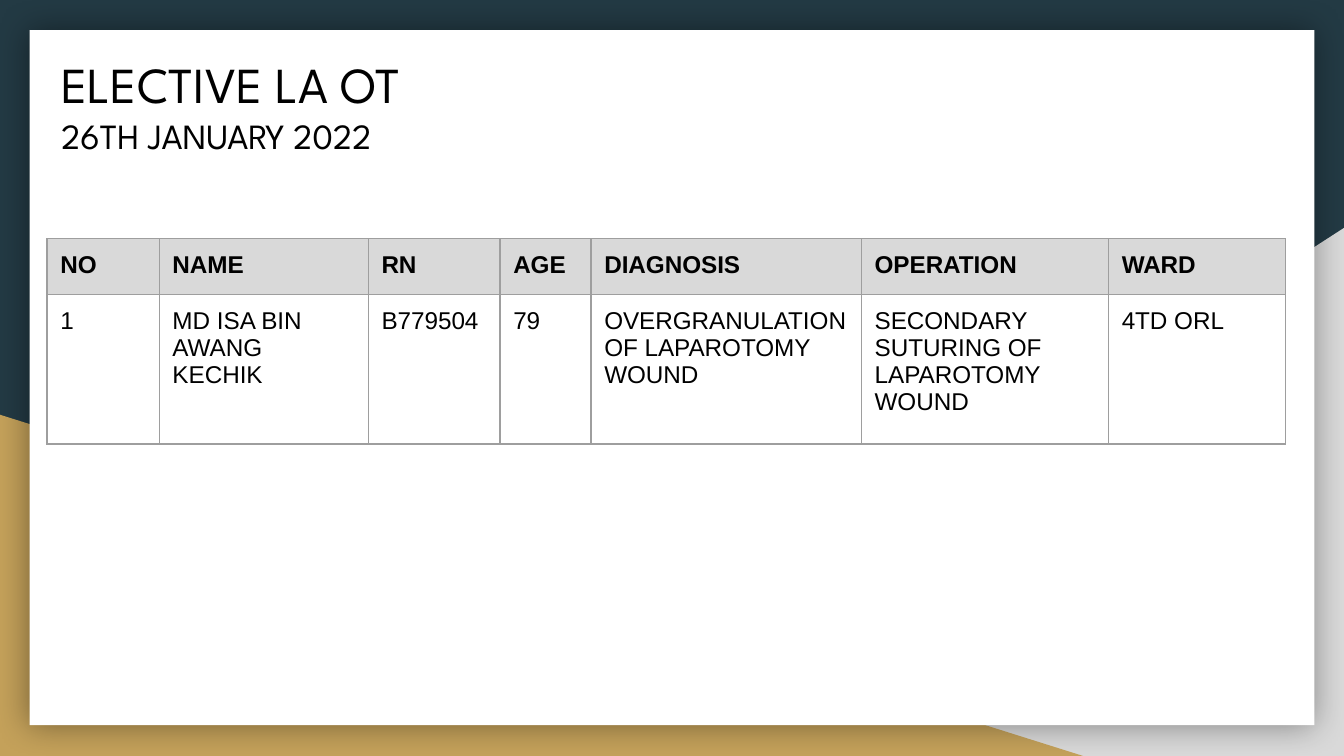
from pptx import Presentation
from pptx.dml.color import RGBColor
from pptx.enum.shapes import MSO_SHAPE
from pptx.enum.text import MSO_ANCHOR
from pptx.oxml.ns import qn
from pptx.util import Cm, Pt
from lxml import etree

RECTANGLE = MSO_SHAPE.RECTANGLE
RIGHT_TRIANGLE = MSO_SHAPE.RIGHT_TRIANGLE
TOP = MSO_ANCHOR.TOP

COLOURS = {
    "navy": "233A44",
    "gold": "C4A15A",
    "grey": "D9D9D9",
    "white": "FFFFFF",
    "black": "000000",
    "border": "9E9E9E",
}
PAGE_WIDTH, PAGE_HEIGHT = 25.4, 14.29
COLUMN_WIDTHS = [2.12, 3.95, 2.49, 1.72, 5.11, 4.67, 3.35]
ROW_HEIGHTS = [1.02, 2.83]
PATIENTS = [
    ["NO", "NAME", "RN", "AGE", "DIAGNOSIS", "OPERATION", "WARD"],
    ["1", "MD ISA BIN AWANG KECHIK", "B779504", "79",
     "OVERGRANULATION OF LAPAROTOMY WOUND",
     "SECONDARY SUTURING OF LAPAROTOMY WOUND", "4TD ORL"],
]


class SlideBuilder:
    title_font = "League Spartan"
    body_font = "Arial"
    body_size = 13
    inset = Cm(0.25)

    def __init__(self, page):
        self.page = page

    def colour(self, name):
        return RGBColor.from_string(COLOURS[name])

    def paint(self, fill, name):
        fill.solid()
        fill.fore_color.rgb = self.colour(name)

    def background(self, name):
        self.paint(self.page.background.fill, name)

    def shape(self, kind, left, top, width, height, fill, flipped=False):
        shape = self.page.shapes.add_shape(kind, Cm(left), Cm(top), Cm(width), Cm(height))
        shape.shadow.inherit = False
        shape.line.fill.background()
        self.paint(shape.fill, fill)
        if flipped:
            shape.element.spPr.find(qn("a:xfrm")).set("flipH", "1")
        return shape

    def glow_shadow(self, shape, name, blur, opacity):
        effects = shape.element.spPr.find(qn("a:effectLst"))
        shadow = etree.SubElement(effects, qn("a:outerShdw"), blurRad=str(Pt(blur)),
                                  dist="0", dir="0", algn="ctr", rotWithShape="0")
        shade = etree.SubElement(shadow, qn("a:srgbClr"), val=COLOURS[name])
        etree.SubElement(shade, qn("a:alpha"), val=str(opacity * 1000))

    def set_insets(self, holder):
        holder.margin_left = holder.margin_right = self.inset
        holder.margin_top = holder.margin_bottom = self.inset
        holder.vertical_anchor = TOP

    def add_span(self, para, text, font, size, bold=False):
        span = para.add_run()
        span.text = text
        span.font.name = font
        span.font.size = Pt(size)
        span.font.bold = bold
        span.font.color.rgb = self.colour("black")

    def title(self, left, top, width, height, lines):
        box = self.page.shapes.add_textbox(Cm(left), Cm(top), Cm(width), Cm(height))
        frame = box.text_frame
        frame.word_wrap = True
        self.set_insets(frame)
        for index, (text, size) in enumerate(lines):
            para = frame.add_paragraph() if index else frame.paragraphs[0]
            self.add_span(para, text, self.title_font, size)

    def border(self, cell):
        properties = cell._tc.get_or_add_tcPr()
        for side in ("a:lnL", "a:lnR", "a:lnT", "a:lnB"):
            line = etree.SubElement(properties, qn(side), w=str(Pt(0.75)))
            fill = etree.SubElement(line, qn("a:solidFill"))
            etree.SubElement(fill, qn("a:srgbClr"), val=COLOURS["border"])

    def table(self, left, top, widths, heights, rows):
        frame = self.page.shapes.add_table(len(rows), len(widths), Cm(left), Cm(top),
                                           Cm(sum(widths)), Cm(sum(heights)))
        table = frame.table
        table.horz_banding = False
        for column, width in zip(table.columns, widths):
            column.width = Cm(width)
        for row, height, texts in zip(table.rows, heights, rows):
            row.height = Cm(height)
            heading = texts is rows[0]
            for cell, text in zip(row.cells, texts):
                self.set_insets(cell)
                self.border(cell)
                if heading:
                    self.paint(cell.fill, "grey")
                else:
                    cell.fill.background()
                self.add_span(cell.text_frame.paragraphs[0], text,
                              self.body_font, self.body_size, heading)


def main():
    deck = Presentation()
    deck.slide_width, deck.slide_height = Cm(PAGE_WIDTH), Cm(PAGE_HEIGHT)
    builder = SlideBuilder(deck.slides.add_slide(deck.slide_layouts[6]))
    builder.background("navy")
    builder.shape(RIGHT_TRIANGLE, 9.96, 4.31, 15.44, 9.98, "grey", flipped=True)
    builder.shape(RIGHT_TRIANGLE, 0, 7.84, 20.47, 6.45, "gold")
    panel = builder.shape(RECTANGLE, 0.56, 0.57, 24.28, 13.14, "white")
    builder.glow_shadow(panel, "black", blur=18, opacity=40)
    builder.title(0.91, 0.76, 20.85, 2.64,
                  [("ELECTIVE LA OT", 27), ("26TH JANUARY 2022", 19)])
    builder.table(0.89, 4.51, COLUMN_WIDTHS, ROW_HEIGHTS, PATIENTS)
    deck.save("out.pptx")


if __name__ == "__main__":
    main()
